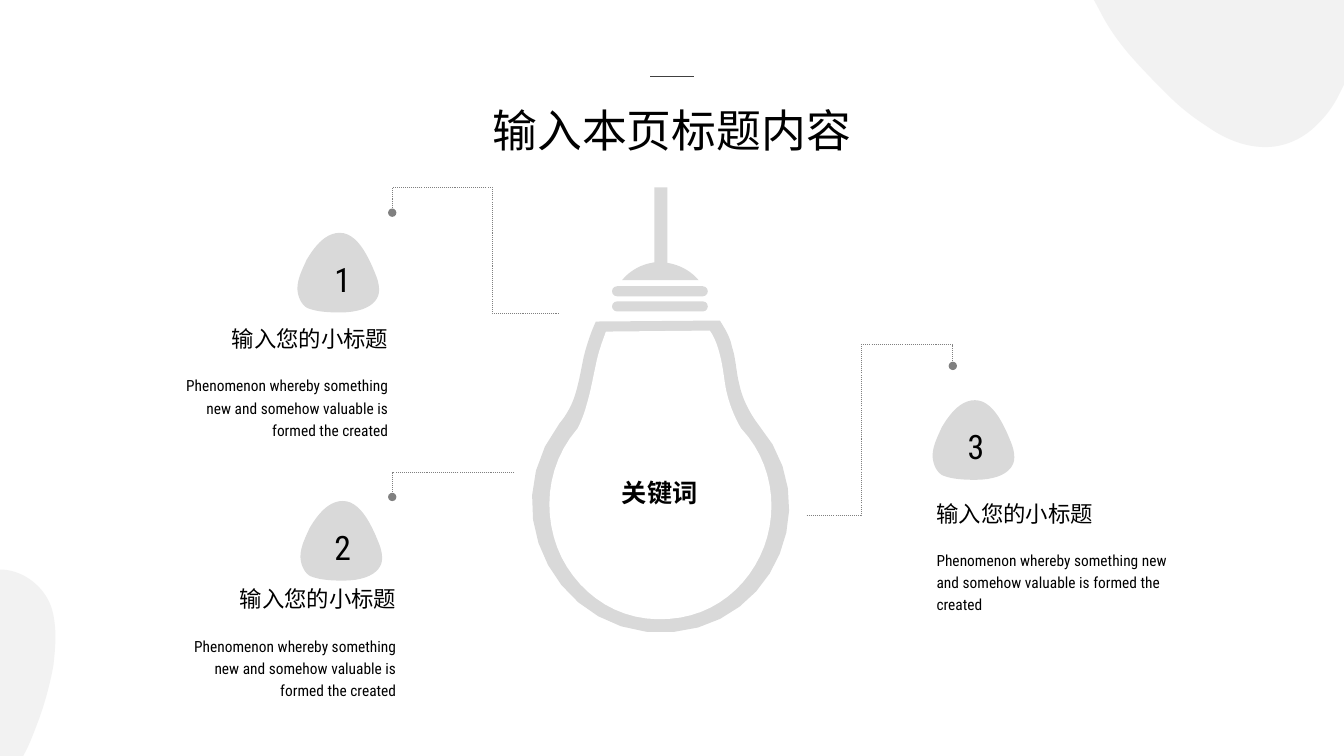
"""Build a slide with a light bulb and three numbered points around it."""
from lxml import etree
from pptx import Presentation
from pptx import util as u
from pptx.dml.color import RGBColor
from pptx.enum import dml, shapes, text
from pptx.oxml import ns

BLACK = RGBColor(0, 0, 0)
WHITE = RGBColor(255, 255, 255)
DARK = RGBColor(0x40, 0x40, 0x40)
MIDDLE = RGBColor(0x80, 0x80, 0x80)
BULB = RGBColor(0xD9, 0xD9, 0xD9)
PALE = RGBColor(0xF2, 0xF2, 0xF2)
LEFT, CENTER, RIGHT = text.PP_ALIGN.LEFT, text.PP_ALIGN.CENTER, text.PP_ALIGN.RIGHT
MIDDLE_ANCHOR = text.MSO_ANCHOR.MIDDLE
CURVE_STEPS = 12

HEADING = "输入您的小标题"
DETAIL = "Phenomenon whereby something new and somehow valuable is formed the created"

POINTS = [
    ("1", (2.95, 2.31), 3.33, (1.59, 3.21), 2.36, RIGHT),
    ("2", (2.98, 4.97), 3.33, (1.67, 5.79), 2.36, RIGHT),
    ("3", (9.25, 3.97), 9.61, (9.19, 4.94), 2.55, LEFT),
]
LEADERS = [
    [(5.54, 3.11), (4.88, 3.11), (4.88, 1.86), (3.89, 1.86), (3.89, 2.11)],
    [(8, 5.11), (8.54, 5.11), (8.54, 3.42), (9.45, 3.42), (9.45, 3.63)],
    [(5.1, 4.69), (3.89, 4.69), (3.89, 4.93)],
]

PEBBLE = [
    (0.11, 0.75), (0.05, 0.73, 0, 0.64, 0, 0.55), (0, 0.45, 0.06, 0.34, 0.09, 0.27),
    (0.15, 0.17, 0.26, 0, 0.42, 0), (0.58, 0, 0.69, 0.2, 0.77, 0.4),
    (0.8, 0.47, 0.81, 0.52, 0.81, 0.57), (0.81, 0.68, 0.7, 0.79, 0.42, 0.79),
    (0.29, 0.79, 0.19, 0.78, 0.11, 0.75),
]
GLASS = [
    (5.91, 3.19), (7.14, 3.18), (7.19, 3.26, 7.24, 3.34, 7.26, 3.44),
    (7.3, 3.56, 7.3, 3.68, 7.33, 3.8), (7.36, 3.95, 7.43, 4.09, 7.52, 4.21),
    (8.19, 4.98, 7.7, 6.18, 6.68, 6.27), (5.56, 6.37, 4.86, 5.09, 5.55, 4.2),
    (5.61, 4.13, 5.66, 4.04, 5.69, 3.96), (5.74, 3.82, 5.76, 3.68, 5.79, 3.54),
    (5.82, 3.42, 5.86, 3.3, 5.91, 3.19),
]
HOLLOW = [
    (6.01, 3.29), (7.04, 3.28), (7.09, 3.35, 7.12, 3.44, 7.14, 3.52),
    (7.17, 3.63, 7.18, 3.75, 7.2, 3.86), (7.23, 4, 7.28, 4.13, 7.35, 4.25),
    (7.66, 4.58, 7.72, 5.04, 7.58, 5.42), (7.43, 5.82, 7.08, 6.11, 6.64, 6.14),
    (6.16, 6.18, 5.77, 5.92, 5.57, 5.53), (5.38, 5.14, 5.4, 4.63, 5.73, 4.25),
    (5.77, 4.17, 5.8, 4.09, 5.82, 4.01), (5.86, 3.88, 5.88, 3.75, 5.91, 3.62),
    (5.93, 3.51, 5.97, 3.4, 6.01, 3.29),
]
CAP = [
    (6.93, 2.78), (6.83, 2.66, 6.68, 2.6, 6.52, 2.6),
    (6.38, 2.61, 6.25, 2.68, 6.17, 2.78), (6.93, 2.78),
]
TOP_CORNER = [
    (10.85, 0), (13.33, 0), (13.33, 0.84), (13.26, 0.98),
    (13.21, 1.07, 13.15, 1.15, 13.08, 1.22), (12.93, 1.38, 12.74, 1.46, 12.55, 1.46),
    (12.35, 1.46, 12.15, 1.38, 11.98, 1.26), (11.84, 1.17, 11.71, 1.07, 11.59, 0.95),
    (11.46, 0.82, 11.33, 0.69, 11.2, 0.54), (11.09, 0.41, 10.99, 0.27, 10.92, 0.13),
    (10.85, 0),
]
BOTTOM_CORNER = [
    (0, 5.65), (0.12, 5.65, 0.25, 5.7, 0.35, 5.79),
    (0.43, 5.86, 0.49, 5.95, 0.52, 6.06), (0.54, 6.14, 0.55, 6.23, 0.55, 6.32),
    (0.55, 6.41, 0.54, 6.51, 0.53, 6.6), (0.49, 6.82, 0.43, 7.03, 0.35, 7.23),
    (0.32, 7.31, 0.29, 7.39, 0.23, 7.5), (0, 7.5), (0, 5.65),
]


def flatten(outline):
    """Turn corners and cubic curves into a list of points."""
    points = [outline[0]]
    for part in outline[1:]:
        if len(part) == 2:
            points.append(part)
            continue
        ends = [points[-1], part[:2], part[2:4], part[4:]]
        for step in range(1, CURVE_STEPS + 1):
            t = step / CURVE_STEPS
            weights = ((1 - t) ** 3, 3 * t * (1 - t) ** 2, 3 * t * t * (1 - t), t ** 3)
            points.append(tuple(sum(w * end[axis] for w, end in zip(weights, ends))
                                for axis in (0, 1)))
    return points


def write(frame, words, size, align=LEFT, spacing=1.0, before=0, bold=False,
          anchor=text.MSO_ANCHOR.TOP, wrap=True, margin=None):
    """Put one formatted paragraph into a text frame."""
    frame.word_wrap = wrap
    frame.auto_size = text.MSO_AUTO_SIZE.NONE
    frame.vertical_anchor = anchor
    if margin is not None:
        frame.margin_left = frame.margin_right = u.Inches(margin)
        frame.margin_top = frame.margin_bottom = u.Inches(margin)
    para = frame.paragraphs[0]
    para.alignment, para.line_spacing, para.space_before = align, spacing, u.Pt(before)
    span = para.add_run()
    span.text = words
    span.font.name, span.font.size, span.font.bold = "Roboto Condensed", u.Pt(size), bold
    span.font.color.rgb = BLACK


class Board:
    """Hold the style and the current slide."""

    def __init__(self, slide):
        self.slide = slide

    def title(self, words, left, top, width, height, **style):
        """Place the title."""
        box = self.slide.shapes.title
        box.left, box.top = u.Inches(left), u.Inches(top)
        box.width, box.height = u.Inches(width), u.Inches(height)
        write(box.text_frame, words, **style)

    def label(self, words, left, top, width, height, **style):
        """Place a text box."""
        box = self.slide.shapes.add_textbox(*map(u.Inches, (left, top, width, height)))
        write(box.text_frame, words, **style)

    def block(self, kind, left, top, width, height, color):
        """Place a filled preset shape."""
        shape = self.slide.shapes.add_shape(kind, *map(u.Inches, (left, top, width, height)))
        self.paint(shape, color)
        return shape

    def paint(self, shape, color):
        """Fill a shape without line or shadow."""
        shape.shadow.inherit = False
        shape.fill.solid()
        shape.fill.fore_color.rgb = color
        shape.line.fill.background()

    def trace(self, points, left=0, top=0, close=True):
        """Draw a freeform through points moved by left and top."""
        spots = [(u.Inches(x + left), u.Inches(y + top)) for x, y in points]
        builder = self.slide.shapes.build_freeform(*spots[0])
        builder.add_line_segments(spots[1:], close=close)
        return builder.convert_to_shape()

    def curved(self, outline, color, left=0, top=0):
        """Draw a filled curved outline."""
        self.paint(self.trace(flatten(outline), left, top), color)

    def leader(self, points):
        """Draw a dotted elbow line that ends in a dot."""
        shape = self.trace(points, close=False)
        shape.shadow.inherit = False
        shape.fill.background()
        shape.line.color.rgb, shape.line.width = MIDDLE, u.Pt(0.75)
        shape.line.dash_style = dml.MSO_LINE.ROUND_DOT
        outline = shape._element.spPr.find(ns.qn("a:ln"))
        etree.SubElement(outline, ns.qn("a:tailEnd"), type="oval")

    def rule(self, start, end, color, width):
        """Draw a straight line."""
        line = self.slide.shapes.add_connector(
            shapes.MSO_CONNECTOR.STRAIGHT, *map(u.Inches, start + end))
        line.line.color.rgb, line.line.width = color, u.Pt(width)
        etree.SubElement(line._element.spPr, ns.qn("a:effectLst"))


def main():
    """Build and save the deck."""
    deck = Presentation()
    deck.slide_width, deck.slide_height = u.Inches(13.33), u.Inches(7.5)
    board = Board(deck.slides.add_slide(deck.slide_layouts[5]))

    board.curved(TOP_CORNER, PALE)
    board.curved(BOTTOM_CORNER, PALE)
    board.rule((6.45, 0.76), (6.88, 0.76), DARK, 0.5)
    board.title("输入本页标题内容", 4.31, 0.98, 4.71, 0.67, size=32, align=CENTER,
                spacing=0.9, before=10, anchor=MIDDLE_ANCHOR)

    for points in LEADERS:
        board.leader(points)

    board.curved(GLASS, BULB)
    board.curved(HOLLOW, WHITE)
    for top in (2.84, 2.99):
        ring = board.block(shapes.MSO_SHAPE.ROUNDED_RECTANGLE, 6.07, top, 0.95, 0.1, BULB)
        ring.adjustments[0] = 0.5
    board.curved(CAP, BULB)
    board.block(shapes.MSO_SHAPE.RECTANGLE, 6.49, 1.86, 0.13, 0.81, BULB)
    board.label("关键词", 6.07, 4.69, 0.96, 0.4, size=18, bold=True, wrap=False)

    for number, (left, top), digit_left, (text_left, text_top), width, align in POINTS:
        board.curved(PEBBLE, BULB, left, top)
        board.label(number, digit_left, top + 0.26, 0.14, 0.4, size=24, align=CENTER,
                    anchor=MIDDLE_ANCHOR, wrap=False, margin=0)
        board.label(HEADING, text_left, text_top, width, 0.44, size=16, align=align,
                    spacing=0.9)
        board.label(DETAIL, text_left, text_top + 0.44, width, 0.52, size=11, align=align,
                    spacing=1.2)

    deck.save("out.pptx")


if __name__ == "__main__":
    main()
